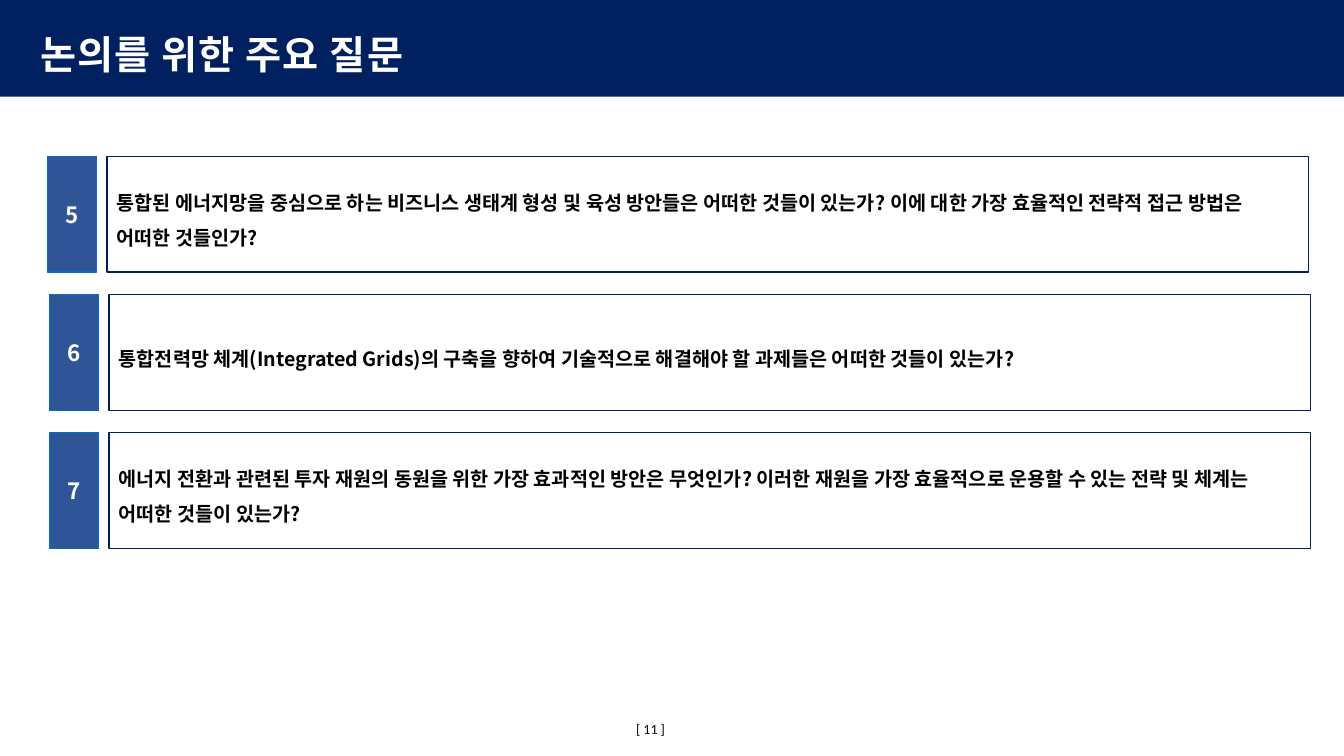
from dataclasses import dataclass

from pptx import Presentation
from pptx import util as u
from pptx.dml.color import RGBColor
from pptx.enum import shapes, text
from pptx.oxml import ns, xmlchemy

PX = 9144


@dataclass(frozen=True)
class Theme:
    navy: str = "002060"
    blue: str = "2F5597"
    edge: str = "0070C0"
    white: str = "FFFFFF"
    black: str = "000000"
    font: str = "Noto Sans CJK KR"
    footer_font: str = "Calibri"
    title_size: int = 28
    number_size: int = 16
    body_size: int = 14
    footer_size: int = 10


class SlideBuilder:
    def __init__(self, presentation, theme):
        self.theme = theme
        layout = presentation.slide_layouts.get_by_name("Title Only")
        self.slide = presentation.slides.add_slide(layout)

    def set_text(self, shape, wording, size, color, bold=True, font=None,
                 align=text.PP_ALIGN.LEFT, anchor=text.MSO_ANCHOR.MIDDLE, spacing=None):
        frame = shape.text_frame
        frame.text = wording
        frame.word_wrap = True
        frame.auto_size = text.MSO_AUTO_SIZE.NONE
        frame.vertical_anchor = anchor
        paragraph = frame.paragraphs[0]
        paragraph.alignment = align
        paragraph.line_spacing = spacing
        paragraph.font.size = u.Pt(size)
        paragraph.font.bold = bold
        paragraph.font.color.rgb = RGBColor.from_string(color)
        paragraph.font.name = font or self.theme.font
        properties = paragraph._p.pPr.find(ns.qn("a:defRPr"))
        east_asian = xmlchemy.OxmlElement("a:ea")
        east_asian.set("typeface", font or self.theme.font)
        properties.append(east_asian)
        return paragraph, properties

    def box(self, left, top, width, height, fill, line=None):
        shape = self.slide.shapes.add_shape(
            shapes.MSO_SHAPE.RECTANGLE, left * PX, top * PX, width * PX, height * PX)
        shape.shadow.inherit = False
        shape.fill.solid()
        shape.fill.fore_color.rgb = RGBColor.from_string(fill)
        if line:
            shape.line.color.rgb = RGBColor.from_string(line)
            shape.line.width = u.Pt(1)
        else:
            shape.line.fill.background()
        return shape

    def title(self, wording):
        theme = self.theme
        title = self.slide.shapes.title
        title.left, title.top, title.width, title.height = (
            value * PX for value in (30, 18, 1206, 59))
        band = self.box(0, 0, 1333, 96, theme.navy)
        title.element.addprevious(band.element)
        paragraph, properties = self.set_text(
            title, wording, theme.title_size, theme.white,
            anchor=text.MSO_ANCHOR.TOP, spacing=1.15)
        paragraph.space_before = u.Pt(5)
        properties.set("spc", "80")

    def question(self, left, top, number, wording):
        theme = self.theme
        body = self.box(left + 59, top, 1192, 115, theme.white, theme.navy)
        self.set_text(body, wording, theme.body_size, theme.black, spacing=1.5)
        badge = self.box(left, top, 49, 115, theme.blue, theme.edge)
        self.set_text(badge, str(number), theme.number_size, theme.white,
                      align=text.PP_ALIGN.CENTER)

    def page_number(self, wording):
        theme = self.theme
        shape = self.slide.shapes.add_textbox(621 * PX, 710 * PX, 52 * PX, 27 * PX)
        self.set_text(shape, wording, theme.footer_size, theme.black, bold=False,
                      font=theme.footer_font, anchor=text.MSO_ANCHOR.TOP)
        shape.text_frame.word_wrap = False


QUESTIONS = [
    (47, "통합된 에너지망을 중심으로 하는 비즈니스 생태계 형성 및 육성 방안들은 어떠한 것들이 있는가? "
         "이에 대한 가장 효율적인 전략적 접근 방법은 어떠한 것들인가?"),
    (49, "통합전력망 체계(Integrated Grids)의 구축을 향하여 기술적으로 해결해야 할 과제들은 "
         "어떠한 것들이 있는가?"),
    (49, "에너지 전환과 관련된 투자 재원의 동원을 위한 가장 효과적인 방안은 무엇인가? "
         "이러한 재원을 가장 효율적으로 운용할 수 있는 전략 및 체계는 어떠한 것들이 있는가?"),
]


def main():
    presentation = Presentation()
    presentation.slide_width = 1333 * PX
    presentation.slide_height = 750 * PX
    builder = SlideBuilder(presentation, Theme())
    builder.title("논의를 위한 주요 질문")
    for index, (left, wording) in enumerate(QUESTIONS):
        builder.question(left, 155 + 137 * index, 5 + index, wording)
    builder.page_number("[ 11 ]")
    presentation.save("out.pptx")


if __name__ == "__main__":
    main()
